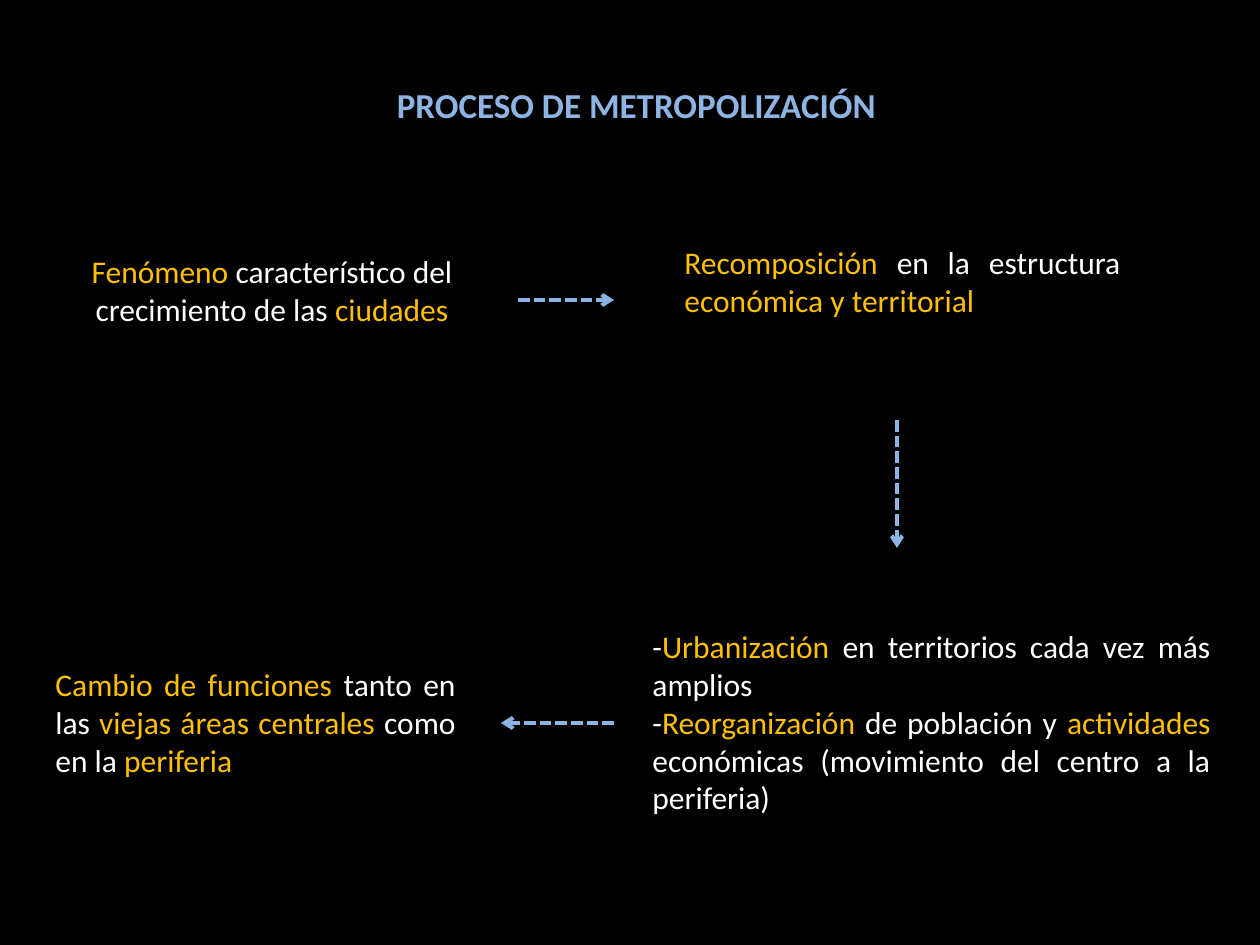
from dataclasses import dataclass

from lxml import etree
from pptx import Presentation
from pptx.dml.color import RGBColor
from pptx.enum.dml import MSO_LINE
from pptx.enum.shapes import MSO_CONNECTOR
from pptx.enum.text import MSO_AUTO_SIZE, PP_ALIGN
from pptx.oxml.ns import qn
from pptx.slide import Slide
from pptx.util import Emu, Pt

STRAIGHT = MSO_CONNECTOR.STRAIGHT
DASHED = MSO_LINE.SQUARE_DOT
CENTER = PP_ALIGN.CENTER
JUSTIFY = PP_ALIGN.JUSTIFY
GROW = MSO_AUTO_SIZE.SHAPE_TO_FIT_TEXT

PX_PER_INCH = 126
SLIDE_SIZE = (1260, 945)
COLORS = {
    "background": "000000",
    "plain": "FFFFFF",
    "key": "FFC000",
    "accent": "8EB4E3",
}
BODY_FONT = {"name": "Calibri", "size": Pt(18)}
TITLE_FONT = {"name": "Calibri", "size": Pt(20), "bold": True}

Run = tuple[str, str]


@dataclass(frozen=True)
class TextBlock:
    left: int
    top: int
    width: int
    height: int
    alignment: PP_ALIGN
    paragraphs: list[list[Run]]
    font: dict


@dataclass(frozen=True)
class Arrow:
    start: tuple[int, int]
    end: tuple[int, int]


TEXT_BLOCKS = [
    # Title
    TextBlock(318, 77, 645, 55, CENTER, [
        [("accent", "PROCESO DE METROPOLIZACIÓN ")],
    ], TITLE_FONT),
    # Four stages, in the order of the arrows
    TextBlock(50, 246, 444, 89, CENTER, [
        [("key", "Fenómeno"),
         ("plain", " característico del crecimiento de las "),
         ("key", "ciudades")],
    ], BODY_FONT),
    TextBlock(672, 237, 461, 89, JUSTIFY, [
        [("key", "Recomposición"),
         ("plain", " en la estructura "),
         ("key", "económica y territorial")],
    ], BODY_FONT),
    TextBlock(640, 621, 583, 204, JUSTIFY, [
        [("plain", "-"),
         ("key", "Urbanización "),
         ("plain", "en territorios cada vez más amplios")],
        [("plain", "-"),
         ("key", "Reorganización"),
         ("plain", " de población y "),
         ("key", "actividades"),
         ("plain", " económicas (movimiento del centro a la periferia)")],
    ], BODY_FONT),
    TextBlock(43, 659, 425, 127, JUSTIFY, [
        [("key", "Cambio de funciones "),
         ("plain", "tanto en las"),
         ("key", " viejas áreas centrales "),
         ("plain", "como en la "),
         ("key", "periferia")],
    ], BODY_FONT),
]

ARROWS = [
    Arrow((518, 300), (614, 300)),
    Arrow((897, 420), (897, 548)),
    Arrow((614, 723), (501, 723)),
]


def px(length: int) -> Emu:
    return Emu(round(length * 914400 / PX_PER_INCH))


def color(name: str) -> RGBColor:
    return RGBColor.from_string(COLORS[name])


def draw_text(slide: Slide, block: TextBlock) -> None:
    shape = slide.shapes.add_textbox(
        px(block.left), px(block.top), px(block.width), px(block.height))
    frame = shape.text_frame
    frame.word_wrap = True
    frame.auto_size = GROW
    for index, runs in enumerate(block.paragraphs):
        paragraph = frame.add_paragraph() if index else frame.paragraphs[0]
        paragraph.alignment = block.alignment
        for color_name, text in runs:
            run = paragraph.add_run()
            run.text = text
            run.font.color.rgb = color(color_name)
            for attribute, value in block.font.items():
                setattr(run.font, attribute, value)


def draw_arrow(slide: Slide, arrow: Arrow) -> None:
    connector = slide.shapes.add_connector(
        STRAIGHT, *map(px, arrow.start + arrow.end))
    line = connector.line
    line.color.rgb = color("accent")
    line_format = {"width": Pt(2.25), "dash_style": DASHED}
    for attribute, value in line_format.items():
        setattr(line, attribute, value)
    # Arrowhead, and no theme shadow
    properties = connector._element.spPr
    etree.SubElement(properties.find(qn("a:ln")), qn("a:tailEnd"), type="arrow")
    etree.SubElement(properties, qn("a:effectLst"))


def main() -> None:
    presentation = Presentation()
    presentation.slide_width, presentation.slide_height = map(px, SLIDE_SIZE)
    slide = presentation.slides.add_slide(presentation.slide_layouts[6])

    # Background
    fill = slide.background.fill
    fill.solid()
    fill.fore_color.rgb = color("background")

    # Texts and the arrows between them
    for block in TEXT_BLOCKS:
        draw_text(slide, block)
    for arrow in ARROWS:
        draw_arrow(slide, arrow)

    presentation.save("out.pptx")


if __name__ == "__main__":
    main()
